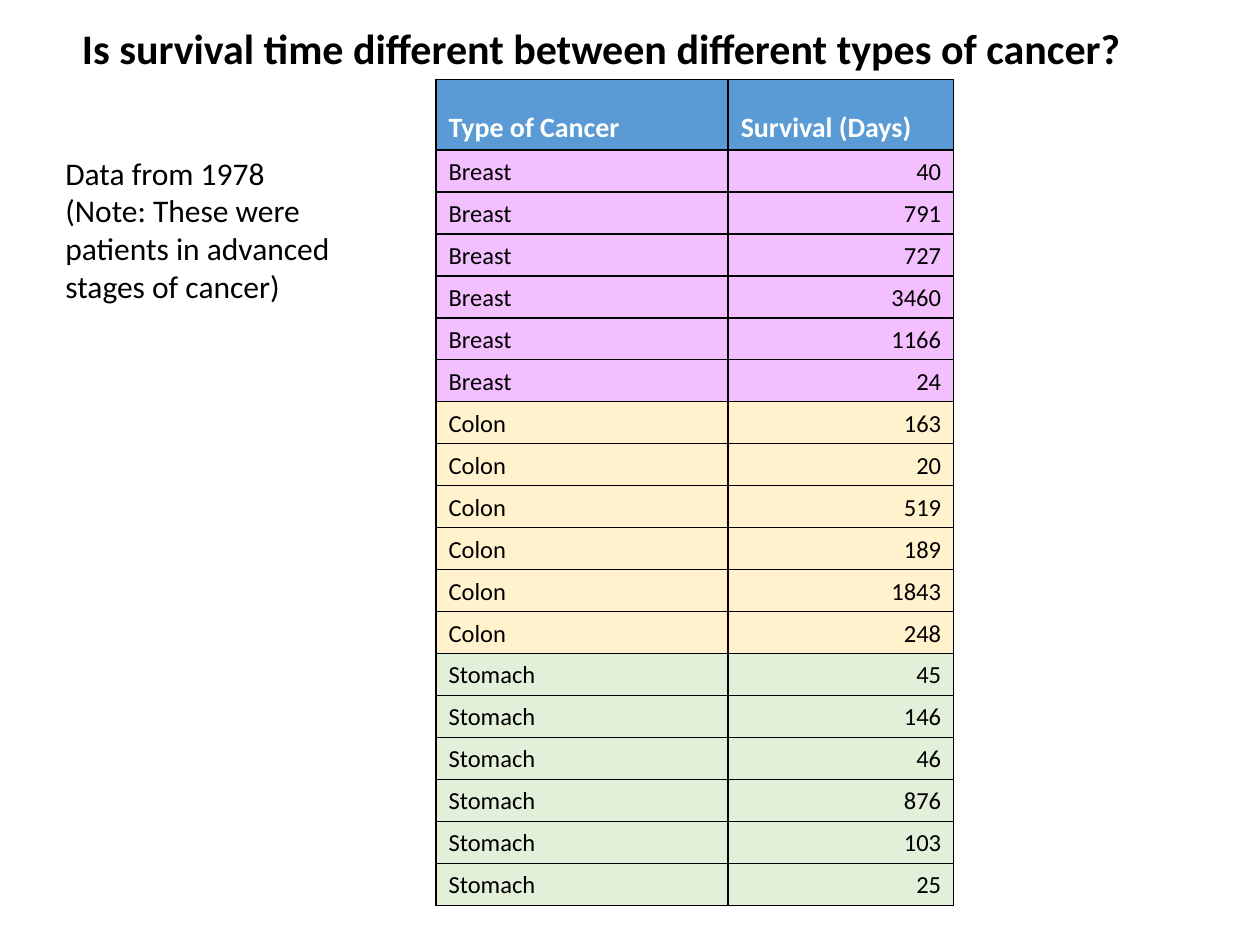
from dataclasses import dataclass

from lxml.etree import SubElement
from pptx import Presentation
from pptx.dml.color import RGBColor as Color
from pptx.enum.text import MSO_ANCHOR as Anchor, MSO_AUTO_SIZE as AutoSize, PP_ALIGN as Align
from pptx.oxml.ns import qn
from pptx.util import Inches, Pt


@dataclass(frozen=True)
class Theme:
    font: str = "Calibri"
    ink: str = "000000"
    header_ink: str = "FFFFFF"
    header_fill: str = "5B9BD5"
    title_size: int = 24
    note_size: int = 18
    header_size: int = 16
    body_size: int = 14
    border_width: int = 1


@dataclass(frozen=True)
class CancerGroup:
    name: str
    fill: str
    survival_days: tuple[int, ...]


THEME = Theme()
TITLE = "Is survival time different between different types of cancer?"
NOTES = ["Data from 1978", "(Note: These were patients in advanced stages of cancer)"]
HEADERS = ["Type of Cancer", "Survival (Days)"]
GROUPS = [
    CancerGroup("Breast", "F4BFFF", (40, 791, 727, 3460, 1166, 24)),
    CancerGroup("Colon", "FFF2CC", (163, 20, 519, 189, 1843, 248)),
    CancerGroup("Stomach", "E2F0D9", (45, 146, 46, 876, 103, 25)),
]
COLUMN_WIDTHS = [2.32, 1.79]
TABLE_HEIGHT = 6.56
HEADER_HEIGHT = 0.56


def set_values(target, values: dict) -> None:
    for name, value in values.items():
        setattr(target, name, value)


def write_text(frame, lines: list[str], size: int, color: str = THEME.ink,
               bold: bool = False, align: Align = Align.LEFT) -> None:
    for index, line in enumerate(lines):
        para = frame.paragraphs[0] if index == 0 else frame.add_paragraph()
        para.alignment = align
        span = para.add_run()
        span.text = line
        set_values(span.font, {"name": THEME.font, "size": Pt(size), "bold": bold})
        span.font.color.rgb = Color.from_string(color)


def place(box, left: float, top: float, width: float, height: float) -> None:
    lengths = {"left": left, "top": top, "width": width, "height": height}
    set_values(box, {name: Inches(value) for name, value in lengths.items()})


def add_borders(cell) -> None:
    properties = cell._tc.get_or_add_tcPr()
    for index, side in enumerate(("lnL", "lnR", "lnT", "lnB")):
        line = properties.makeelement(qn(f"a:{side}"), {"w": str(Pt(THEME.border_width))})
        fill = SubElement(line, qn("a:solidFill"))
        SubElement(fill, qn("a:srgbClr"), val=THEME.ink)
        properties.insert(index, line)


def draw_cell(cell, text: str, fill: str, size: int, color: str = THEME.ink,
              bold: bool = False, align: Align = Align.LEFT) -> None:
    set_values(cell, {
        "vertical_anchor": Anchor.BOTTOM,
        "margin_top": Inches(0.04),
        "margin_bottom": Inches(0.04),
    })
    cell.fill.solid()
    cell.fill.fore_color.rgb = Color.from_string(fill)
    write_text(cell.text_frame, [text], size, color, bold, align)
    add_borders(cell)


def draw_table(page) -> None:
    records = [(group, days) for group in GROUPS for days in group.survival_days]
    table = page.shapes.add_table(
        len(records) + 1, len(HEADERS), Inches(3.46), Inches(0.63),
        Inches(sum(COLUMN_WIDTHS)), Inches(TABLE_HEIGHT)).table
    table.horz_banding = False
    for column, width in zip(table.columns, COLUMN_WIDTHS):
        column.width = Inches(width)
    body_height = (TABLE_HEIGHT - HEADER_HEIGHT) / len(records)
    for index, row in enumerate(table.rows):
        row.height = Inches(body_height if index else HEADER_HEIGHT)
    for column, header in enumerate(HEADERS):
        draw_cell(table.cell(0, column), header, THEME.header_fill,
                  THEME.header_size, THEME.header_ink, bold=True)
    for row, (group, days) in enumerate(records, start=1):
        draw_cell(table.cell(row, 0), group.name, group.fill, THEME.body_size)
        draw_cell(table.cell(row, 1), str(days), group.fill, THEME.body_size, align=Align.RIGHT)


def main() -> None:
    deck = Presentation()
    set_values(deck, {"slide_width": Inches(10), "slide_height": Inches(7.5)})
    page = deck.slides.add_slide(deck.slide_layouts[5])

    title = page.shapes.title
    place(title, 0.55, 0.13, 8.91, 0.5)
    note = page.shapes.add_textbox(0, 0, 0, 0)
    place(note, 0.42, 1.17, 2.81, 1.31)
    for box in (title, note):
        set_values(box.text_frame, {
            "word_wrap": True,
            "auto_size": AutoSize.SHAPE_TO_FIT_TEXT,
            "vertical_anchor": Anchor.TOP,
        })
    write_text(title.text_frame, [TITLE], THEME.title_size, bold=True)
    write_text(note.text_frame, NOTES, THEME.note_size)

    draw_table(page)
    deck.save("out.pptx")


if __name__ == "__main__":
    main()
